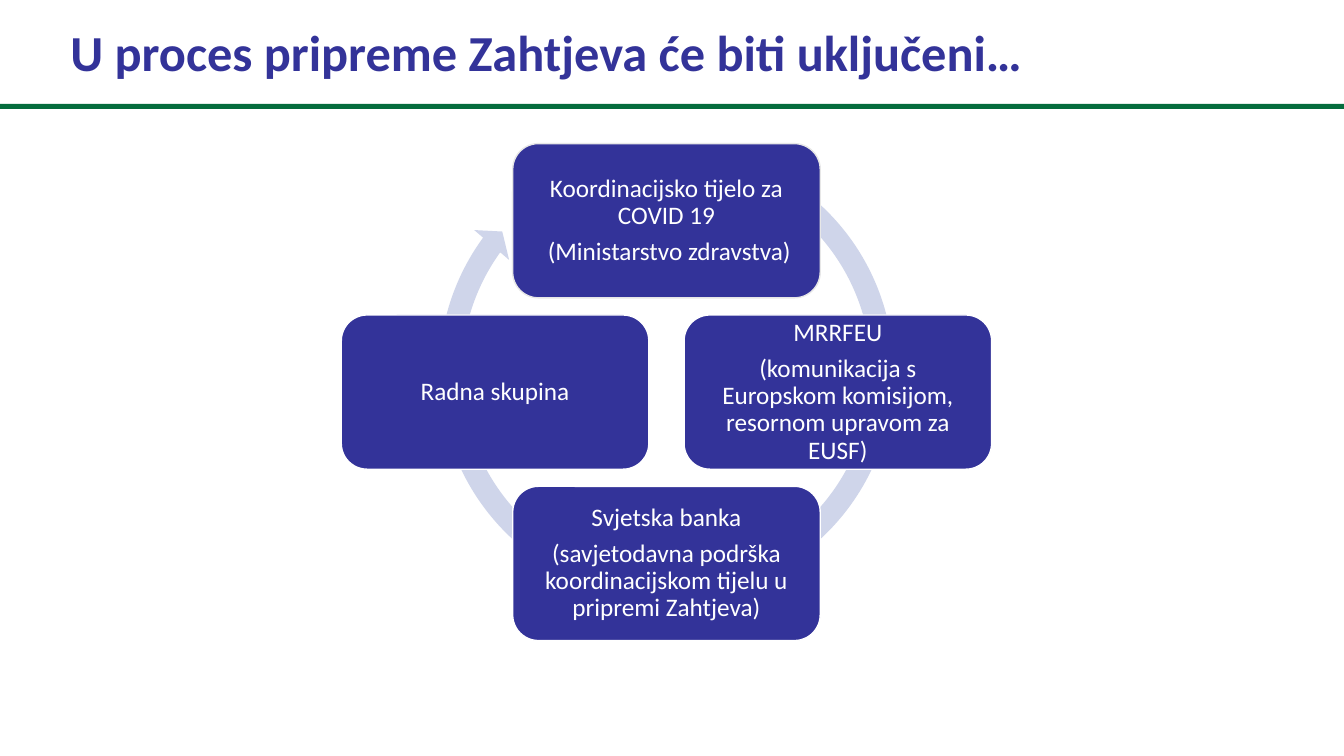
from dataclasses import dataclass

from pptx import Presentation
from pptx import util as u
from pptx.dml import color
from pptx.enum import shapes, text


@dataclass(frozen=True)
class Theme:
    font: str = "Calibri"
    indigo: str = "333399"
    green: str = "056C3D"
    arrow: str = "CFD5EA"
    white: str = "FFFFFF"
    pale_line: str = "E7E7E7"
    title_size: float = 36
    box_size: float = 18
    box_space: float = 6.3


@dataclass(frozen=True)
class Participant:
    column: int  # steps from the cycle's centre
    row: int
    lines: tuple[str, ...]
    outline: str


THEME = Theme()
CENTRE_X, CENTRE_Y, STEP = 6.61, 3.89, 1.7
BOX_WIDTH, BOX_HEIGHT, BOX_MARGIN = 3.05, 1.53, 0.14
ARROW_ADJUSTMENTS = (0.047, 2.729, 129.597, 179.44, 0.048)

PARTICIPANTS = (
    Participant(0, -1, ("Koordinacijsko tijelo za COVID 19",
                        " (Ministarstvo zdravstva)"), THEME.pale_line),
    Participant(1, 0, ("MRRFEU", "(komunikacija s Europskom komisijom, "
                       "resornom upravom za EUSF)"), THEME.white),
    Participant(0, 1, ("Svjetska banka", "(savjetodavna podrška koordinacijskom "
                       "tijelu u pripremi Zahtjeva)"), THEME.white),
    Participant(-1, 0, ("Radna skupina",), THEME.white),
)


def rgb(value: str) -> color.RGBColor:
    return color.RGBColor.from_string(value)


def apply(target, values: dict) -> None:
    for name, value in values.items():
        setattr(target, name, value)


def add_figure(slide, kind, left: float, top: float, width: float, height: float,
               fill: str, outline: str = ""):
    shape = slide.shapes.add_shape(kind, *map(u.Inches, (left, top, width, height)))
    shape.shadow.inherit = False
    shape.fill.solid()
    shape.fill.fore_color.rgb = rgb(fill)
    if outline:
        shape.line.color.rgb = rgb(outline)
        shape.line.width = u.Pt(1)
    else:
        shape.line.fill.background()
    return shape


def write_lines(shape, lines: tuple[str, ...], paragraph_format: dict,
                font_format: dict, font_color: str) -> None:
    frame = shape.text_frame
    apply(frame, {"word_wrap": True, "vertical_anchor": text.MSO_ANCHOR.MIDDLE})
    for index, line in enumerate(lines):
        paragraph = frame.paragraphs[0] if index == 0 else frame.add_paragraph()
        apply(paragraph, {"line_spacing": 0.9, **paragraph_format})
        run = paragraph.add_run()
        run.text = line
        apply(run.font, {"name": THEME.font, **font_format})
        run.font.color.rgb = rgb(font_color)


def add_participant(slide, participant: Participant) -> None:
    left = CENTRE_X + participant.column * STEP - BOX_WIDTH / 2
    top = CENTRE_Y + participant.row * STEP - BOX_HEIGHT / 2
    box = add_figure(slide, shapes.MSO_SHAPE.ROUNDED_RECTANGLE, left, top,
                     BOX_WIDTH, BOX_HEIGHT, THEME.indigo, participant.outline)
    apply(box.text_frame, {f"margin_{side}": u.Inches(BOX_MARGIN)
                           for side in ("left", "top", "right", "bottom")})
    write_lines(box, participant.lines,
                {"alignment": text.PP_ALIGN.CENTER,
                 "space_after": u.Pt(THEME.box_space)},
                {"size": u.Pt(THEME.box_size)}, THEME.white)


def main() -> None:
    presentation = Presentation()
    apply(presentation, {"slide_width": u.Inches(13.33),
                         "slide_height": u.Inches(7.5)})
    slide = presentation.slides.add_slide(presentation.slide_layouts[6])

    # Title and green rule
    add_figure(slide, shapes.MSO_SHAPE.RECTANGLE, 0, 1.03, 13.33, 0.05, THEME.green)
    title = slide.shapes.add_textbox(*map(u.Inches, (0.6, 0.29, 12.83, 0.51)))
    write_lines(title, ("U proces pripreme Zahtjeva će biti uključeni…",), {},
                {"size": u.Pt(THEME.title_size), "bold": True}, THEME.indigo)

    # Cycle arrow behind the boxes
    arrow = add_figure(slide, shapes.MSO_SHAPE.CIRCULAR_ARROW,
                       4.24, 1.32, 4.74, 4.74, THEME.arrow)
    for index, value in enumerate(ARROW_ADJUSTMENTS):
        arrow.adjustments[index] = value

    # Participants around the cycle
    for participant in PARTICIPANTS:
        add_participant(slide, participant)

    presentation.save("out.pptx")


if __name__ == "__main__":
    main()
